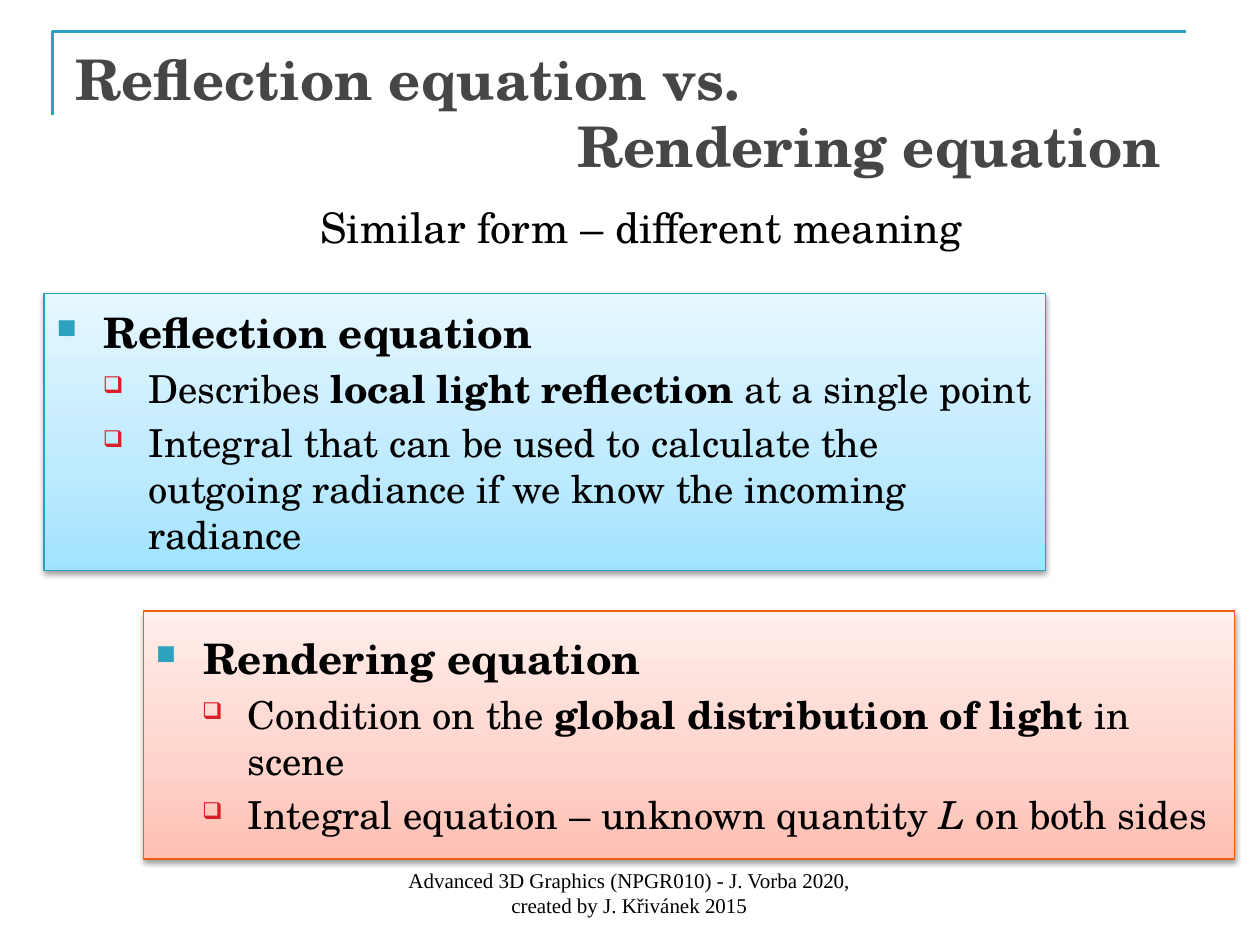
from copy import deepcopy

from lxml import etree
from pptx import Presentation
from pptx.dml.color import RGBColor
from pptx.enum.shapes import MSO_SHAPE
from pptx.enum.text import MSO_ANCHOR, PP_ALIGN
from pptx.oxml.ns import qn
from pptx.util import Pt

RECT = MSO_SHAPE.RECTANGLE
TOP, MID, LOW = MSO_ANCHOR.TOP, MSO_ANCHOR.MIDDLE, MSO_ANCHOR.BOTTOM
LEFT, MID_X, RIGHT = PP_ALIGN.LEFT, PP_ALIGN.CENTER, PP_ALIGN.RIGHT

INK = {
    "frame": "2DA2BF", "title": "464646", "text": "000000",
    "main": "2DA2BF", "sub": "DA1F28",
    "blue": "28A1BE", "red": "EB6015",
}
FADES = {
    "blue": ("A1E3FF", "BDEAFF", "E6F7FF"),
    "red": ("FFBFB3", "FFD2CA", "FFEEEB"),
}
STOPS = (0, 0.35, 1)

# Per level: bullet sign, its size in %, its colour, left edge, hang, text size
LEVELS = (
    ("■", 65, "main", 27, 27, 24),
    ("❑", 60, "sub", 52.5, 26, 22),
)


def rgb(name):
    return RGBColor.from_string(INK.get(name, name))


def add(node, tag, **attrs):
    return etree.SubElement(node, qn(tag), {k: str(v) for k, v in attrs.items()})


class Deck:
    def __init__(self, wide, high):
        self.prs = Presentation()
        self.prs.slide_width, self.prs.slide_height = Pt(wide), Pt(high)
        self.slide = self.prs.slides.add_slide(self.prs.slide_layouts[6])
        self.face = "TeX Gyre Schola"

    def run(self, para, text, size, ink="text", face=None, **style):
        run = para.add_run()
        run.text = text
        look = {"name": face or self.face, "size": Pt(size), **style}
        for key, value in look.items():
            setattr(run.font, key, value)
        run.font.color.rgb = rgb(ink)

    def frame(self, points):
        """Open line through the points."""
        first, *rest = [(Pt(x), Pt(y)) for x, y in points]
        path = self.slide.shapes.build_freeform(*first)
        path.add_line_segments(rest, close=False)
        line = path.convert_to_shape()
        line.shadow.inherit = False
        line.fill.background()
        line.line.color.rgb = rgb("frame")
        line.line.width = Pt(1.5)

    def text(self, box, lines, size, anchor=TOP, inset=7.2, **style):
        """Text box; each line is a pair of wording and alignment."""
        body = self.slide.shapes.add_textbox(*map(Pt, box)).text_frame
        look = {"word_wrap": True, "vertical_anchor": anchor,
                "margin_right": Pt(inset)}
        for key, value in look.items():
            setattr(body, key, value)
        for i, (words, align) in enumerate(lines):
            para = body.add_paragraph() if i else body.paragraphs[0]
            para.alignment = align
            self.run(para, words, size, **style)

    def bullet(self, para, level, runs):
        sign, scale, ink, left, hang, size = LEVELS[level]
        para.level, para.alignment = level, LEFT
        para.space_before = Pt(size * 0.2)
        props = para._p.get_or_add_pPr()
        props.set("marL", str(Pt(left)))
        props.set("indent", str(-Pt(hang)))
        add(add(props, "a:buClr"), "a:srgbClr", val=INK[ink])
        add(props, "a:buSzPct", val=scale * 1000)
        add(props, "a:buChar", char=sign)
        for words, style in runs:
            self.run(para, words, size, **style)

    def card(self, box, hue, items):
        """Shaded box with a bulleted heading and points."""
        card = self.slide.shapes.add_shape(RECT, *map(Pt, box))
        card.line.color.rgb = rgb(hue)
        card.line.width = Pt(0.75)

        # Three-colour fade from bottom to top
        card.fill.gradient()
        stop = card._element.spPr.find(".//" + qn("a:gs"))
        stop.addnext(deepcopy(stop))
        for stop, at, ink in zip(card.fill.gradient_stops, STOPS, FADES[hue]):
            stop.position, stop.color.rgb = at, rgb(ink)
        card.fill.gradient_angle = 90

        # Soft shadow below
        card.shadow.inherit = False
        glow = add(card._element.spPr.find(qn("a:effectLst")), "a:outerShdw",
                   blurRad=Pt(3.1), dist=Pt(1.6), dir=5400000, rotWithShape=0)
        add(add(glow, "a:srgbClr", val="000000"), "a:alpha", val=38000)

        body = card.text_frame
        body.word_wrap, body.vertical_anchor = True, MID
        for i, runs in enumerate(items):
            para = body.add_paragraph() if i else body.paragraphs[0]
            self.bullet(para, min(i, 1), runs)


def main():
    deck = Deck(720, 540)
    bold, slant = {"bold": True}, {"italic": True}

    # Corner line and the two cards
    deck.frame([(30, 66), (30, 18), (678, 18)])
    deck.card((25.2, 167.8, 572.4, 158.4), "blue", [
        [("Reflection equation", bold)],
        [("Describes ", {}), ("local light reflection", bold),
         (" at a single point", {})],
        [("Integral that can be used to calculate the outgoing radiance "
          "if we know the incoming radiance", {})],
    ])
    deck.card((82, 349.2, 623.5, 141.8), "red", [
        [("Rendering equation", bold)],
        [("Condition on the ", {}), ("global distribution of light", bold),
         (" in scene", {})],
        [("Integral equation – unknown quantity ", {}), ("L ", slant),
         ("on both sides", {})],
    ])

    # Title, subtitle and footer
    deck.text((36, 21.6, 653, 90),
              [("Reflection equation vs.", LEFT), ("Rendering equation", RIGHT)],
              32, inset=25.5, ink="title", bold=True)
    deck.text((42.5, 111.6, 648, 39.6),
              [("Similar form – different meaning", MID_X)], 24)
    deck.text((212.4, 491.8, 294.5, 36),
              [("Advanced 3D Graphics (NPGR010) - J. Vorba 2020, "
                "created by J. Křivánek 2015", MID_X)],
              12, anchor=LOW, face="Times New Roman")
    deck.prs.save("out.pptx")


if __name__ == "__main__":
    main()
